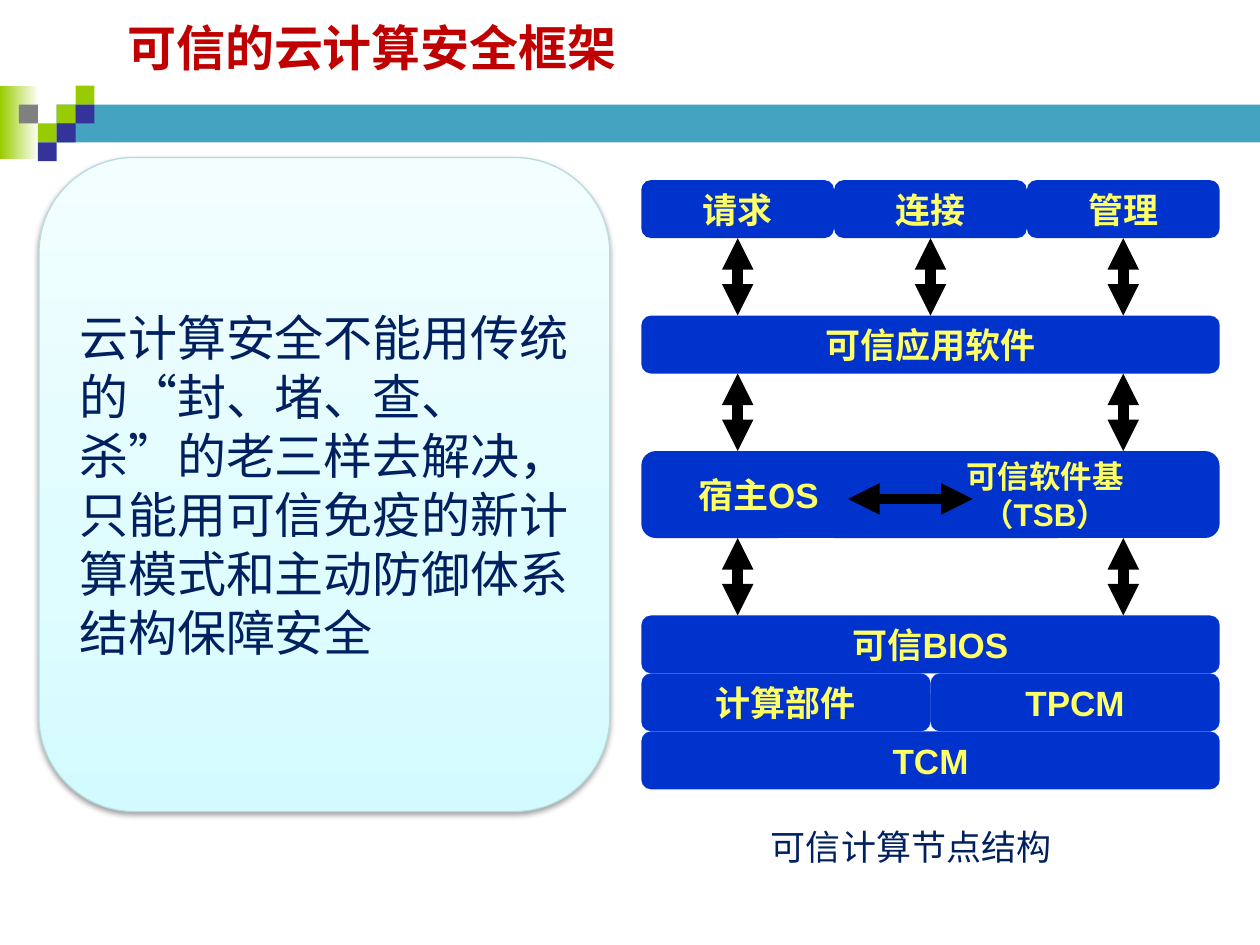
from lxml import etree
from pptx import Presentation
from pptx.dml.color import RGBColor
from pptx.enum.shapes import MSO_CONNECTOR, MSO_SHAPE
from pptx.enum.text import MSO_ANCHOR, MSO_AUTO_SIZE, PP_ALIGN
from pptx.oxml.ns import qn
from pptx.util import Inches, Pt

RECT, ROUNDED = MSO_SHAPE.RECTANGLE, MSO_SHAPE.ROUNDED_RECTANGLE
STRAIGHT = MSO_CONNECTOR.STRAIGHT
LEFT, CENTER = PP_ALIGN.LEFT, PP_ALIGN.CENTER
MIDDLE = MSO_ANCHOR.MIDDLE
FIT_SHAPE = MSO_AUTO_SIZE.SHAPE_TO_FIT_TEXT
TOP_SIDE, BOTTOM_SIDE = 0, 2
CJK = "Noto Sans CJK SC"
COLORS = {
    "title": "C00000", "body": "002060", "label": "FFFF66", "block": "0033CC",
    "arrow": "000000", "bar": "43A3C1", "green": "99CC00", "indigo": "333399",
    "gray": "808080", "white": "FFFFFF", "panel_line": "B6DCDF",
    "panel_low": "D3FBFF", "panel_mid": "DFFCFF", "panel_high": "F2FEFF",
}


def color(name):
    """Return the named colour."""
    return RGBColor.from_string(COLORS[name])


def write(frame, text, size, font_name, color_name, bold=False, align=LEFT):
    """Fill a text frame and format each of its paragraphs."""
    frame.text = text
    for paragraph in frame.paragraphs:
        paragraph.alignment = align
        font = paragraph.font
        font.size, font.bold, font.name = Pt(size), bold, font_name
        font.color.rgb = color(color_name)
        defaults = paragraph._p.pPr.find(qn("a:defRPr"))
        etree.SubElement(defaults, qn("a:ea")).set("typeface", CJK)


def add_box(slide, kind, box, fill=None):
    """Add a flat shape without outline at box (left, top, width, height)."""
    shape = slide.shapes.add_shape(kind, *map(Inches, box))
    shape.shadow.inherit = False
    shape.line.fill.background()
    if fill:
        shape.fill.solid()
        shape.fill.fore_color.rgb = color(fill)
    return shape


def set_gradient(shape, stops, angle):
    """Give a shape a linear gradient of (percent, colour) stops."""
    gradient = etree.Element(qn("a:gradFill"), rotWithShape="1")
    stop_list = etree.SubElement(gradient, qn("a:gsLst"))
    for percent, name in stops:
        stop = etree.SubElement(stop_list, qn("a:gs"), pos=str(percent * 1000))
        etree.SubElement(stop, qn("a:srgbClr"), val=COLORS[name])
    etree.SubElement(gradient, qn("a:lin"), ang=str(angle * 60000), scaled="0")
    shape._element.spPr.find(qn("a:prstGeom")).addnext(gradient)


def add_shadow(shape):
    """Give a shape a soft shadow falling downwards."""
    effects = shape._element.spPr.find(qn("a:effectLst"))
    shadow = etree.SubElement(
        effects, qn("a:outerShdw"), blurRad=str(Pt(3.1)), dist=str(Pt(1.6)),
        dir="5400000", rotWithShape="0")
    tint = etree.SubElement(shadow, qn("a:srgbClr"), val="000000")
    etree.SubElement(tint, qn("a:alpha"), val="38000")


def add_arrow(slide, start, end):
    """Add a thick double-headed arrow between two points."""
    arrow = slide.shapes.add_connector(STRAIGHT, *map(Inches, start + end))
    arrow.line.width = Pt(6)
    arrow.line.color.rgb = color("arrow")
    line = arrow.line._get_or_add_ln()
    for tag in ("a:headEnd", "a:tailEnd"):
        etree.SubElement(line, qn(tag), type="triangle")
    etree.SubElement(arrow._element.spPr, qn("a:effectLst"))
    return arrow


def add_banner(slide, left, top, width):
    """Draw the header bar with its fading edge and mosaic of squares."""
    cell = 0.15
    edge = add_box(slide, RECT, (left, top, 0.31, 0.58))
    set_gradient(edge, [(0, "green"), (100, "white")], 0)
    bar_left = left + 3 * cell
    add_box(slide, RECT, (bar_left, top + cell, width - 3 * cell, 2 * cell), "bar")
    mosaic = [(3, 1, "green"), (4, 0, "green"), (4, 1, "indigo"), (2, 2, "green"),
              (1, 1, "gray"), (3, 2, "indigo"), (2, 3, "indigo")]
    for column, row, fill in mosaic:
        add_box(slide, RECT, (left + column * cell, top + row * cell, cell, cell), fill)


def add_title(slide, box):
    """Place and format the title placeholder."""
    title = slide.shapes.title
    title.left, title.top, title.width, title.height = map(Inches, box)
    write(title.text_frame, "可信的云计算安全框架", 28, "Times New Roman", "title", True)
    title.text_frame.vertical_anchor = MIDDLE


def add_statement(slide, box):
    """Draw the shaded panel with the main statement."""
    panel = add_box(slide, ROUNDED, box)
    set_gradient(panel, [(0, "panel_low"), (35, "panel_mid"), (100, "panel_high")], 270)
    panel.line.color.rgb = color("panel_line")
    panel.line.width = Pt(0.75)
    add_shadow(panel)
    frame = panel.text_frame
    frame.word_wrap = True
    frame.vertical_anchor = MIDDLE
    write(frame, "云计算安全不能用传统的“封、堵、查、杀”的老三样去解决，"
          "只能用可信免疫的新计算模式和主动防御体系结构保障安全", 28, CJK, "body")


def add_block(slide, box, text, size=20, indent=0.1):
    """Draw one labelled block of the node structure."""
    block = add_box(slide, ROUNDED, box, "block")
    frame = block.text_frame
    frame.word_wrap = True
    frame.vertical_anchor = MIDDLE
    frame.margin_left = Inches(indent)
    write(frame, text, size, "Arial", "label", True, CENTER)
    return block


def add_node_structure(slide, left, top, width):
    """Draw the layered trusted node with its arrows."""
    row, tall, gap = 0.46, 0.69, 0.615
    third, half = width / 3, width / 2
    app_top = top + row + gap
    host_top = app_top + row + gap
    bios_top = host_top + tall + gap
    centers = [left + third * (index + 0.5) for index in range(3)]

    add_block(slide, (left + width - 3.17, host_top, 3.17, tall),
              "可信软件基\n（TSB）", 18, 0.5)
    add_block(slide, (left, host_top, 1.86, tall), "宿主OS")
    services = [add_block(slide, (left + index * third, top, third, row), label)
                for index, label in enumerate(("请求", "连接", "管理"))]
    application = add_block(slide, (left, app_top, width, row), "可信应用软件")
    add_block(slide, (left, bios_top, width, row), "可信BIOS")
    for index, label in enumerate(("计算部件", "TPCM")):
        add_block(slide, (left + index * half, bios_top + row, half, row), label)
    add_block(slide, (left, bios_top + 2 * row, width, row), "TCM")

    for service, center in zip(services, centers):
        arrow = add_arrow(slide, (center, top + row), (center, app_top))
        arrow.begin_connect(service, BOTTOM_SIDE)
        if center == centers[1]:
            arrow.end_connect(application, TOP_SIDE)
    for lower_top in (host_top, bios_top):
        for center in (centers[0], centers[2]):
            add_arrow(slide, (center, lower_top - gap), (center, lower_top))
    add_arrow(slide, (left + 2.63, host_top + 0.38), (left + 1.64, host_top + 0.38))


def add_caption(slide, box):
    """Write the caption below the node structure."""
    caption = slide.shapes.add_textbox(*map(Inches, box))
    caption.text_frame.word_wrap = False
    caption.text_frame.auto_size = FIT_SHAPE
    write(caption.text_frame, "可信计算节点结构", 20, CJK, "body")


def main():
    """Build and save the slide."""
    deck = Presentation()
    deck.slide_width, deck.slide_height = Inches(10), Inches(7.5)
    slide = deck.slides.add_slide(deck.slide_layouts[5])
    add_banner(slide, 0, 0.68, 10)
    add_title(slide, (0.91, 0.05, 4.62, 0.64))
    add_caption(slide, (6.02, 6.5, 2.45, 0.44))
    add_statement(slide, (0.31, 1.25, 4.53, 5.19))
    add_node_structure(slide, 5.09, 1.43, 4.59)
    deck.save("out.pptx")


if __name__ == "__main__":
    main()
